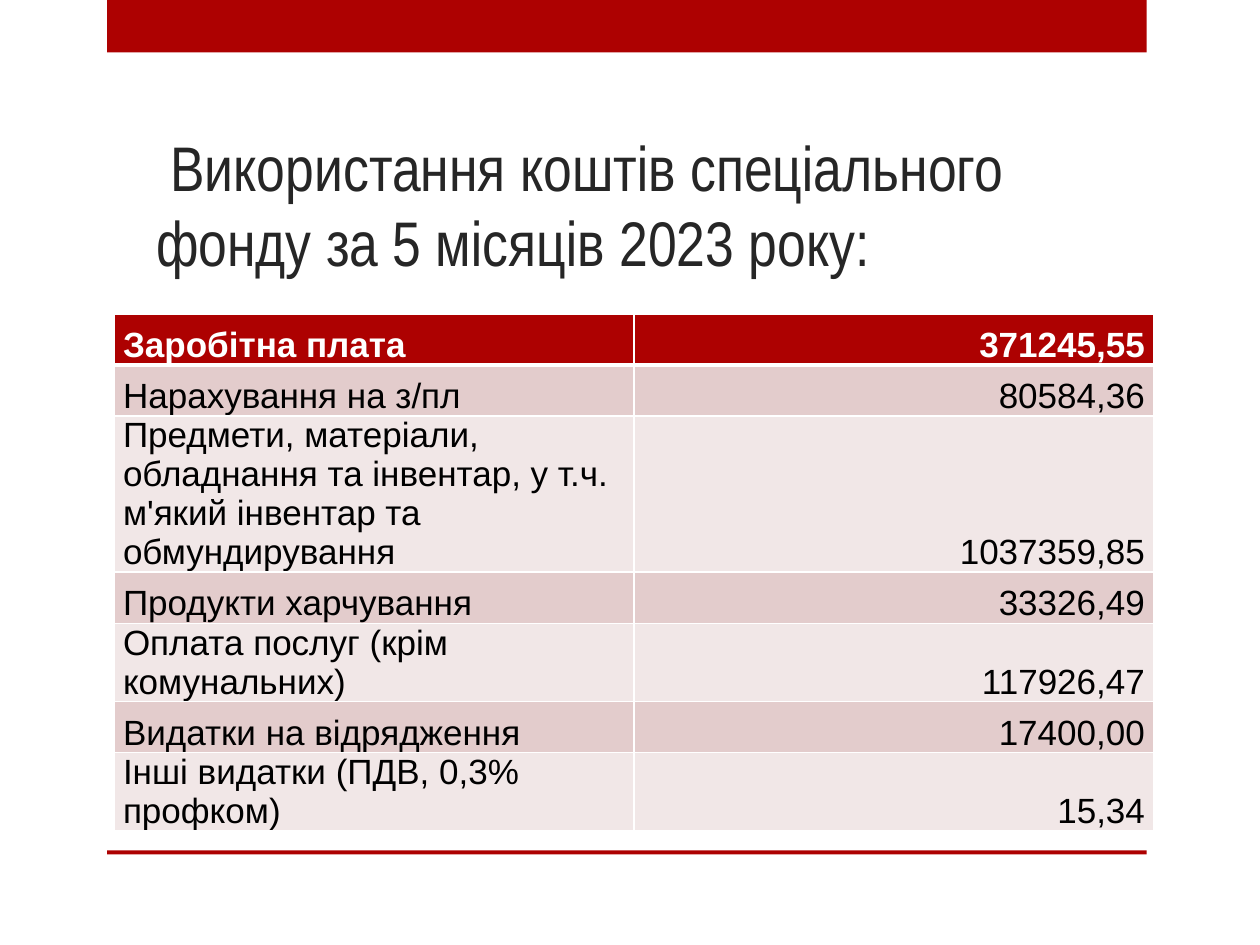
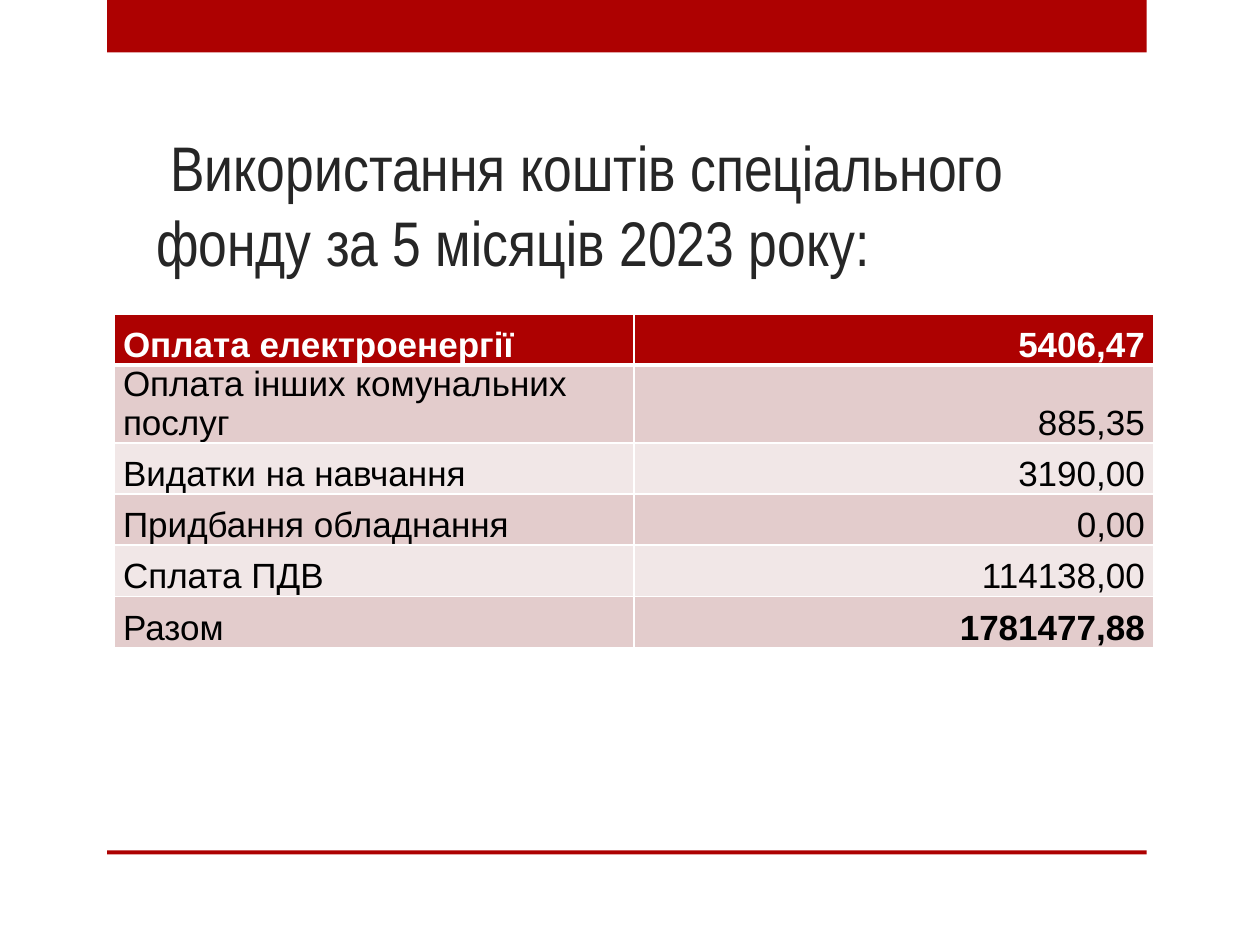
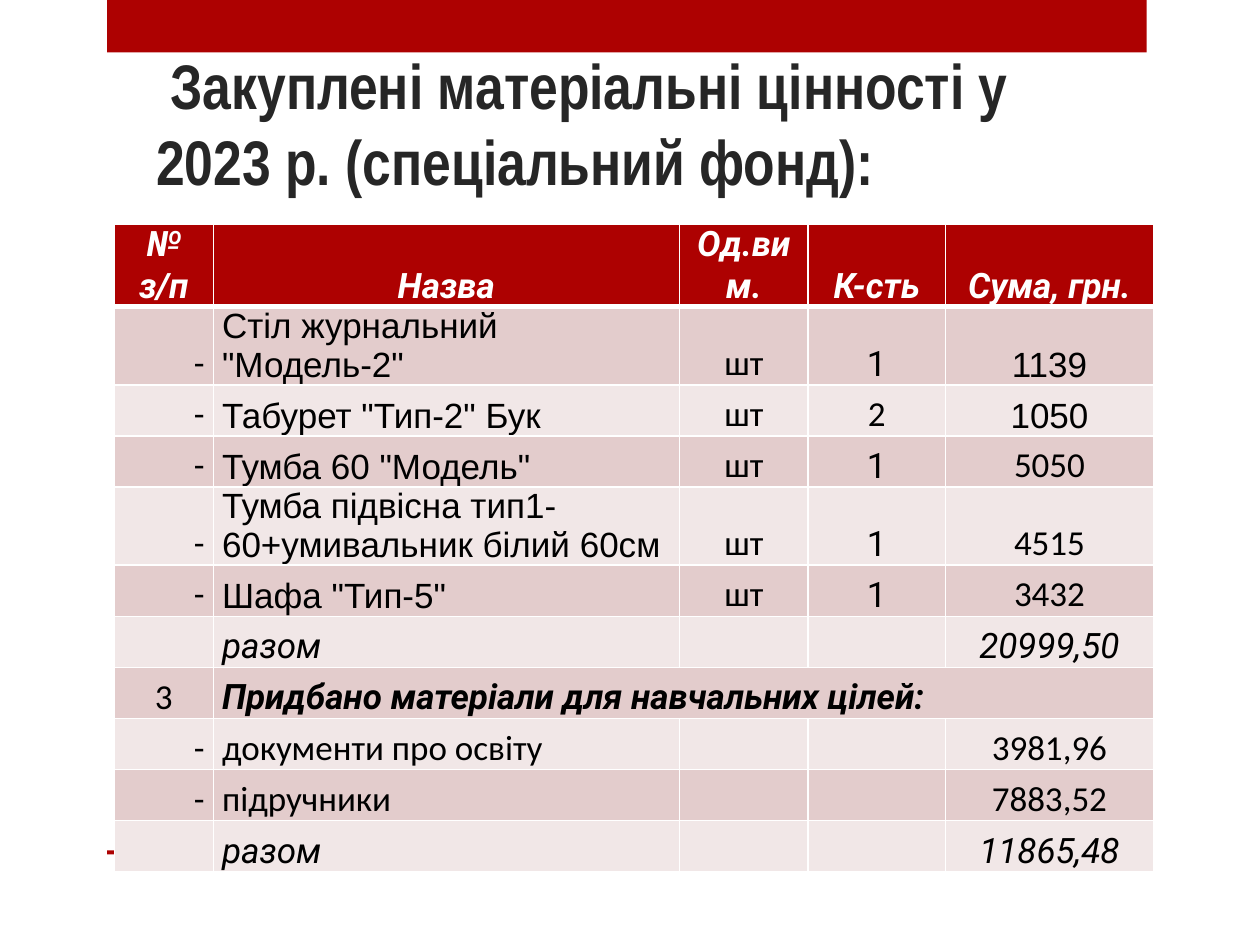
from lxml.etree import SubElement
from pptx import Presentation
from pptx.dml.color import RGBColor
from pptx.enum.shapes import MSO_SHAPE
from pptx.enum.text import MSO_ANCHOR, MSO_AUTO_SIZE, PP_ALIGN
from pptx.oxml.ns import qn
from pptx.util import Pt

COLORS = {"red": "AD0101", "title": "262626", "white": "FFFFFF", "black": "000000",
          "band_dark": "E3CCCC", "band_light": "F1E7E7"}
ALIGN = {"l": PP_ALIGN.LEFT, "c": PP_ALIGN.CENTER, "r": PP_ALIGN.RIGHT}

MARGIN, FRAME_W = 61.2, 594
BAND_H, RULE_Y, RULE_H = 30, 486, 2.2
TITLE_X, TITLE_Y, TITLE_W = 82, 37.4, 534
TABLE_X, ROW_H, CELL_INSET = 65.3, 29.2, 5
TEXT_SIZE, TITLE_SIZE = 20, 36

# Row kind: fonts by column, alignment by column, bold, italic
KINDS = {
    "sum_head": (["Arial"] * 2, "lr", True, False),
    "sum": (["Arial"] * 2, "lr", False, False),
    "head": (["Roboto"] * 5, "ccccc", True, True),
    "item": (["Calibri", "Arial", "Calibri", "Roboto", "Calibri"], "rlccc", False, False),
    "supply": (["Calibri"] * 5, "rlccc", False, False),
    "total": (["Roboto"] * 5, "rlccc", False, True),
    "section": (["Roboto"] * 5, "clccc", True, True),
}

FUND_TITLE = [(" Використання коштів спеціального фонду за 5 місяців 2023 року:", False)]

SLIDES = [
    {"title": FUND_TITLE, "title_h": 126, "table_y": 179.3, "cols": [297, 297],
     "rows": [
         ("sum_head", "Заробітна плата", "371245,55"),
         ("sum", "Нарахування на з/пл", "80584,36"),
         ("sum", "Предмети, матеріали, обладнання та інвентар, у т.ч. "
                 "м'який інвентар та обмундирування", "1037359,85"),
         ("sum", "Продукти харчування", "33326,49"),
         ("sum", "Оплата послуг (крім комунальних)", "117926,47"),
         ("sum", "Видатки на відрядження", "17400,00"),
         ("sum", "Інші видатки (ПДВ, 0,3% профком)", "15,34"),
     ]},
    {"title": FUND_TITLE, "title_h": 126, "table_y": 179.3, "cols": [297, 297],
     "rows": [
         ("sum_head", "Оплата електроенергії", "5406,47"),
         ("sum", "Оплата інших комунальних послуг", "885,35"),
         ("sum", "Видатки на навчання", "3190,00"),
         ("sum", "Придбання обладнання", "0,00"),
         ("sum", "Сплата ПДВ", "114138,00"),
         ("sum", "Разом", "1781477,88"),
     ],
     "special": {(5, 1): {"bold": True}}},
    {"title": [(" ", False),
               ("Закуплені матеріальні цінності у 2023 р. (спеціальний фонд):", True)],
     "title_h": 79.2, "table_y": 128.2, "cols": [56.6, 266.4, 73.6, 78.4, 119],
     "rows": [
         ("head", "№ з/п", "Назва", "Од.вим.", "К-сть", "Сума, грн."),
         ("item", " -", "Стіл журнальний \"Модель-2\"", "шт", "1", "1139"),
         ("item", " -", "Табурет \"Тип-2\" Бук", "шт", "2", "1050"),
         ("item", " -", "Тумба 60 \"Модель\"", "шт", "1", "5050"),
         ("item", " -", "Тумба підвісна тип1-60+умивальник білий 60см", "шт", "1", "4515"),
         ("item", " -", "Шафа \"Тип-5\"", "шт", "1", "3432"),
         ("total", "", "разом", "", "", "20999,50"),
         ("section", "3", "Придбано матеріали для навчальних цілей:", "", "", ""),
         ("supply", " -", "документи про освіту", "", "", "3981,96"),
         ("supply", " -", "підручники", "", "", "7883,52"),
         ("total", "", "разом", "", "", "11865,48"),
     ],
     "special": {(1, 4): {"name": "Arial"}, (2, 4): {"name": "Arial"},
                 (2, 3): {"name": "Calibri"},
                 (7, 0): {"name": "Calibri", "bold": False, "italic": False}}},
]


def rgb(name):
    return RGBColor.from_string(COLORS[name])


def style_font(font, size, color, name, bold, italic=False):
    font.size, font.name, font.bold, font.italic = Pt(size), name, bold, italic
    font.color.rgb = rgb(color)


def add_master_bars(prs, slide):
    """Draw the top band and bottom rule, then move them behind the master's placeholders."""
    tree = prs.slide_master.shapes.element
    for i, (y, h) in enumerate([(0, BAND_H), (RULE_Y, RULE_H)]):
        sp = slide.shapes.add_shape(MSO_SHAPE.RECTANGLE, Pt(MARGIN), Pt(y), Pt(FRAME_W), Pt(h))
        sp.shadow.inherit = False
        sp.fill.solid()
        sp.fill.fore_color.rgb = rgb("red")
        sp.line.fill.background()
        sp.element.nvSpPr.cNvPr.id = 100 + i
        tree.insert(2 + i, sp.element)


def add_title(slide, runs, height):
    sp = slide.shapes.title
    sp.left, sp.top, sp.width, sp.height = Pt(TITLE_X), Pt(TITLE_Y), Pt(TITLE_W), Pt(height)
    tf = sp.text_frame
    tf.auto_size, tf.word_wrap = MSO_AUTO_SIZE.NONE, True
    tf.vertical_anchor = MSO_ANCHOR.BOTTOM
    p = tf.paragraphs[0]
    p.alignment = PP_ALIGN.LEFT
    for text, bold in runs:
        r = p.add_run()
        r.text = text
        style_font(r.font, TITLE_SIZE, "title", "Arial Narrow", bold)


def set_borders(cell, top, bottom):
    tc_pr = cell._tc.get_or_add_tcPr()
    for side, width in (("L", 1), ("R", 1), ("T", top), ("B", bottom)):
        ln = SubElement(tc_pr, qn("a:ln" + side), w=str(Pt(width)))
        fill = SubElement(ln, qn("a:solidFill"))
        SubElement(fill, qn("a:srgbClr"), val=COLORS["white"])


def fill_cell(cell, row, text, align, font):
    set_borders(cell, 3 if row == 1 else 1, 3 if row == 0 else 1)
    cell.fill.solid()
    band = "red" if row == 0 else ("band_dark" if row % 2 else "band_light")
    cell.fill.fore_color.rgb = rgb(band)
    cell.margin_left = cell.margin_right = Pt(CELL_INSET)
    cell.margin_top = cell.margin_bottom = 0
    cell.vertical_anchor = MSO_ANCHOR.BOTTOM
    if text:
        p = cell.text_frame.paragraphs[0]
        p.alignment = ALIGN[align]
        r = p.add_run()
        r.text = text
        style_font(r.font, TEXT_SIZE, "black" if row else "white", **font)


def add_table(slide, y, cols, rows, special):
    table = slide.shapes.add_table(len(rows), len(cols), Pt(TABLE_X), Pt(y),
                                   Pt(sum(cols)), Pt(ROW_H * len(rows))).table
    for col, width in zip(table.columns, cols):
        col.width = Pt(width)
    for i, (kind, *texts) in enumerate(rows):
        table.rows[i].height = Pt(ROW_H)
        fonts, aligns, bold, italic = KINDS[kind]
        for j, text in enumerate(texts):
            font = {"name": fonts[j], "bold": bold, "italic": italic, **special.get((i, j), {})}
            fill_cell(table.cell(i, j), i, text, aligns[j], font)
        if kind == "section":
            table.cell(i, 1).merge(table.cell(i, len(cols) - 1))


def main():
    prs = Presentation()
    prs.slide_width, prs.slide_height = Pt(720), Pt(540)
    for i, content in enumerate(SLIDES):
        slide = prs.slides.add_slide(prs.slide_layouts[5])
        if i == 0:
            add_master_bars(prs, slide)
        add_title(slide, content["title"], content["title_h"])
        add_table(slide, content["table_y"], content["cols"], content["rows"],
                  content.get("special", {}))
    prs.save("out.pptx")


if __name__ == "__main__":
    main()
